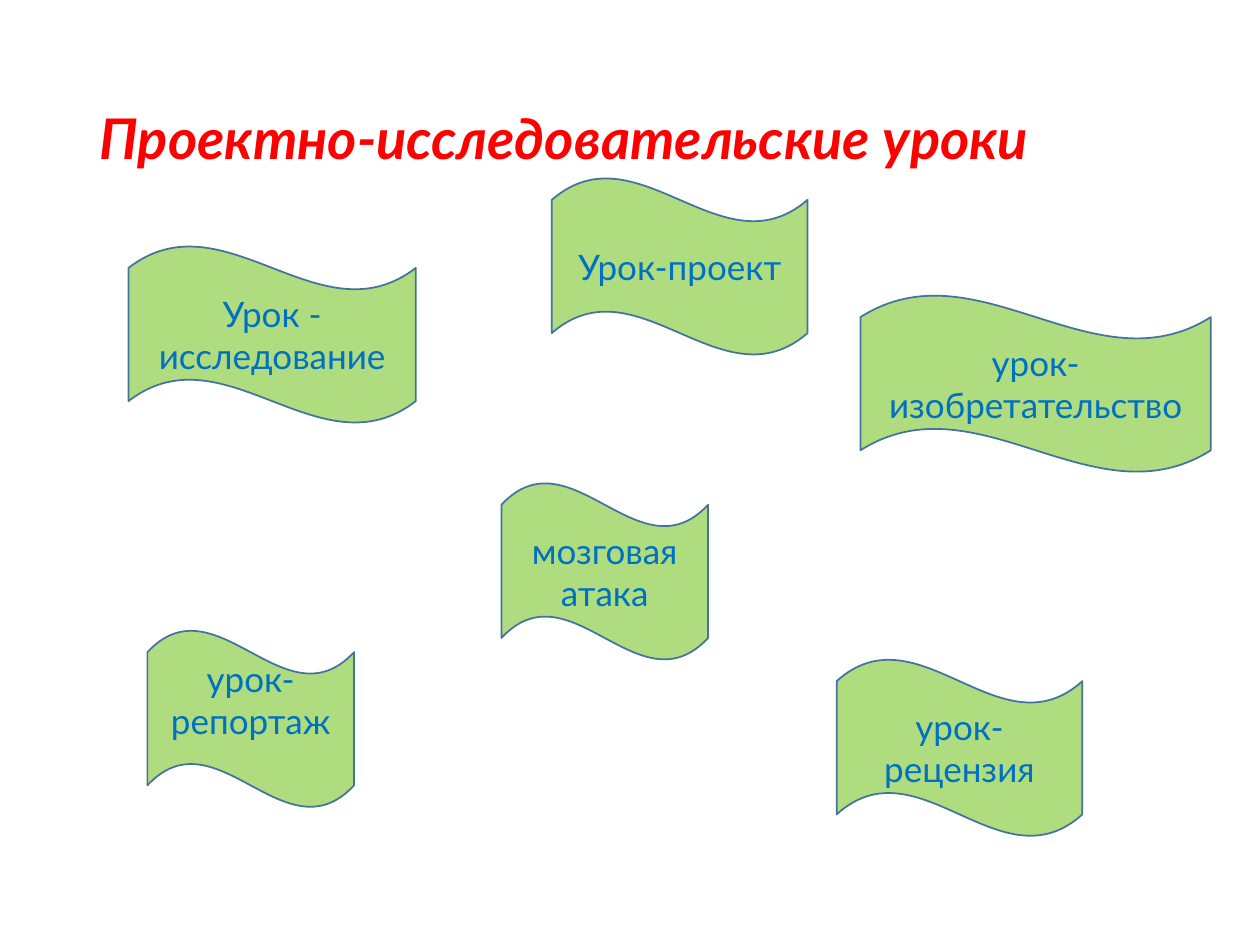
from dataclasses import dataclass

import pptx
import pptx.dml.color
import pptx.enum.shapes
import pptx.enum.text
import pptx.oxml.ns
import pptx.util
from lxml import etree
from pptx.util import Inches


@dataclass(frozen=True)
class Theme:
    font: str = "Lato"
    title_color: str = "FF0000"
    label_color: str = "0070C0"
    wave_fill: str = "92D050"
    wave_line: str = "43739E"
    wave_opacity: int = 73
    title_size: int = 32
    label_size: int = 20


def rgb(value):
    return pptx.dml.color.RGBColor.from_string(value)


class LessonSlide:
    def __init__(self, page, theme):
        self.page = page
        self.theme = theme

    def set_text(self, frame, text, size, color):
        frame.word_wrap = True
        frame.vertical_anchor = pptx.enum.text.MSO_ANCHOR.MIDDLE
        frame.text = text
        para = frame.paragraphs[0]
        span = para.runs[0]
        span.font.name = self.theme.font
        span.font.size = pptx.util.Pt(size)
        span.font.color.rgb = rgb(color)
        return para, span

    def title(self, text, left, top, width, height):
        box = self.page.shapes.add_textbox(
            Inches(left), Inches(top), Inches(width), Inches(height))
        para, span = self.set_text(
            box.text_frame, text, self.theme.title_size, self.theme.title_color)
        para.line_spacing = 0.9
        span.font.bold = True
        span.font.italic = True

    def wave(self, text, left, top, width, height, bottom_inset):
        shape = self.page.shapes.add_shape(
            pptx.enum.shapes.MSO_SHAPE.WAVE,
            Inches(left), Inches(top), Inches(width), Inches(height))
        shape.shadow.inherit = False
        shape.fill.solid()
        shape.fill.fore_color.rgb = rgb(self.theme.wave_fill)
        shape.line.color.rgb = rgb(self.theme.wave_line)
        shape.line.width = pptx.util.Pt(1)

        # Semi-transparent fill
        qn = pptx.oxml.ns.qn
        color = shape.element.spPr.find(qn("a:solidFill")).find(qn("a:srgbClr"))
        etree.SubElement(color, qn("a:alpha"), val=str(self.theme.wave_opacity * 1000))

        shape.text_frame.margin_bottom = Inches(bottom_inset)
        para, span = self.set_text(
            shape.text_frame, text, self.theme.label_size, self.theme.label_color)
        para.alignment = pptx.enum.text.PP_ALIGN.CENTER


WAVE_HEIGHT = 1.41
NORMAL_INSET = 0.05
RAISED_INSET = 0.35

# Lesson type, left, top, width, bottom inset
LESSONS = [
    ("Урок - исследование", 1.02, 1.95, 2.28, NORMAL_INSET),
    ("мозговая атака", 3.98, 3.83, 1.64, NORMAL_INSET),
    ("урок-репортаж", 1.17, 5, 1.64, RAISED_INSET),
    ("Урок-проект", 4.38, 1.41, 2.03, NORMAL_INSET),
    ("урок-рецензия", 6.64, 5.23, 1.95, NORMAL_INSET),
    ("урок-изобретательство", 6.83, 2.34, 2.78, NORMAL_INSET),
]


def main():
    deck = pptx.Presentation()
    deck.slide_width = Inches(10)
    deck.slide_height = Inches(7.5)
    page = deck.slides.add_slide(deck.slide_layouts[6])
    slide = LessonSlide(page, Theme())

    # Heading
    slide.title("Проектно-исследовательские уроки", 0.69, 0.4, 8.62, 1.45)

    # Lesson types
    for text, left, top, width, inset in LESSONS:
        slide.wave(text, left, top, width, WAVE_HEIGHT, inset)

    deck.save("out.pptx")


if __name__ == "__main__":
    main()
